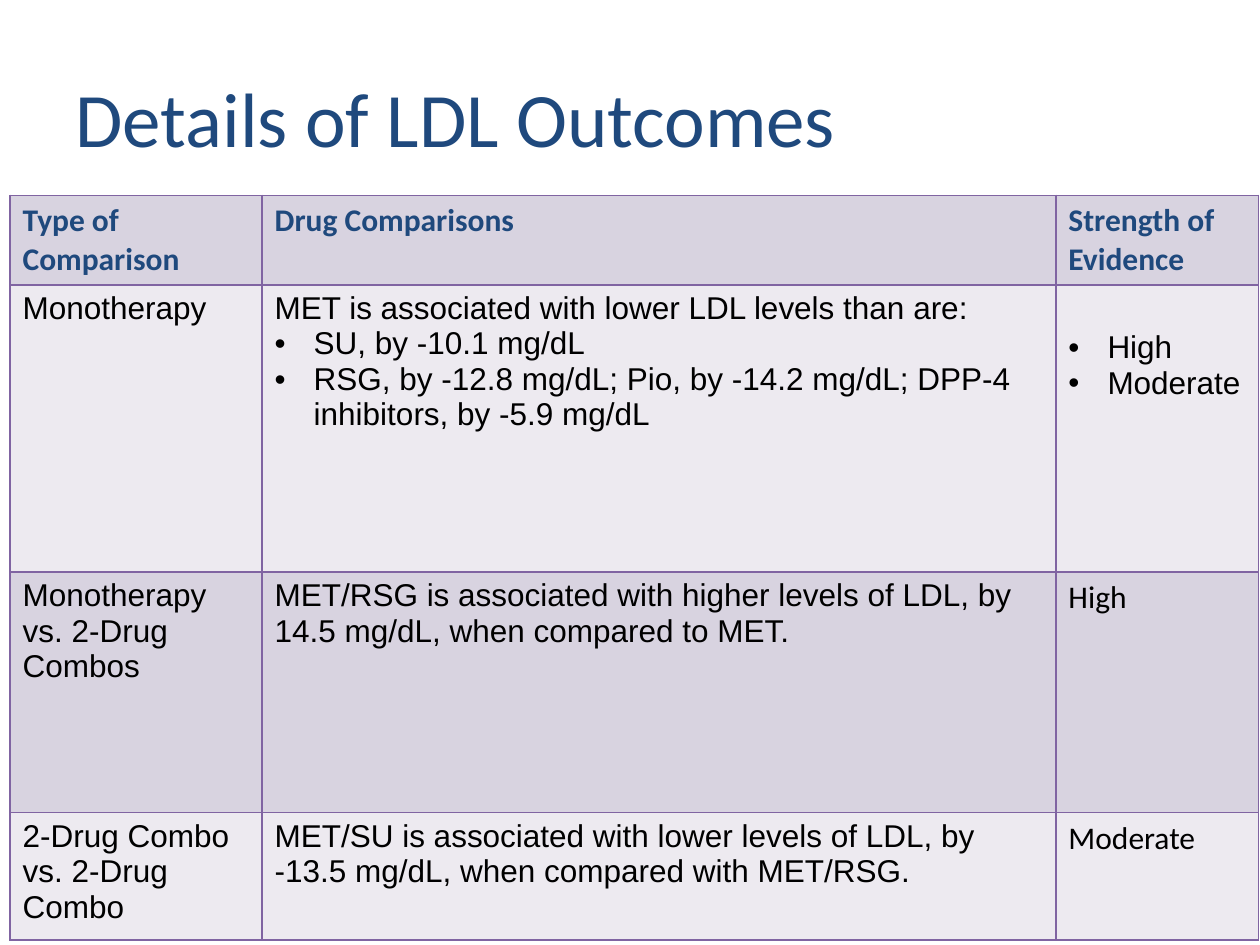
"""Build the slide that details LDL outcomes by drug comparison."""
from lxml.etree import SubElement
from pptx import Presentation
from pptx.dml.color import RGBColor
from pptx.enum.text import MSO_ANCHOR, PP_ALIGN
from pptx.oxml.ns import qn
from pptx.util import Inches, Pt

COLORS = {
    "heading": "1F497D",
    "text": "000000",
    "border": "8064A2",
    "dark_band": "D8D3E0",
    "light_band": "EDEAF0",
}
COLUMN_WIDTHS = [2, 6.3, 1.61]
ROW_HEIGHTS = [0.71, 2.28, 1.91, 1.01]
BULLET = "• "
ROWS = [
    [["Type of Comparison"], ["Drug Comparisons"], ["Strength of Evidence"]],
    [
        ["Monotherapy"],
        [
            "MET is associated with lower LDL levels than are:",
            BULLET + "SU, by -10.1 mg/dL",
            BULLET + "RSG, by -12.8 mg/dL; Pio, by -14.2 mg/dL; "
            "DPP-4 inhibitors, by -5.9 mg/dL",
        ],
        [BULLET + "High", BULLET + "Moderate"],
    ],
    [
        ["Monotherapy vs. 2-Drug Combos"],
        ["MET/RSG is associated with higher levels of LDL, by 14.5 mg/dL, "
         "when compared to MET."],
        ["High"],
    ],
    [
        ["2-Drug Combo vs. 2-Drug Combo"],
        ["MET/SU is associated with lower levels of LDL, by -13.5 mg/dL, "
         "when compared with MET/RSG."],
        ["Moderate"],
    ],
]


class SlideBuilder:
    """Hold the style and the current slide, and add elements to it."""

    def __init__(self, presentation):
        """Start a slide with a title placeholder."""
        self.slide = presentation.slides.add_slide(presentation.slide_layouts[5])

    def color(self, name):
        """Return a named colour."""
        return RGBColor.from_string(COLORS[name])

    def style(self, paragraph, font_name, size, color, bold=False):
        """Set the font of a paragraph."""
        font = paragraph.font
        font.name, font.size, font.bold = font_name, Pt(size), bold
        font.color.rgb = self.color(color)

    def title(self, text, left, top, width, height):
        """Fill and place the title."""
        shape = self.slide.shapes.title
        shape.left, shape.top = Inches(left), Inches(top)
        shape.width, shape.height = Inches(width), Inches(height)
        frame = shape.text_frame
        frame.text = text
        frame.vertical_anchor = MSO_ANCHOR.MIDDLE
        paragraph = frame.paragraphs[0]
        paragraph.alignment = PP_ALIGN.LEFT
        self.style(paragraph, "Calibri", 44, "heading")

    def bullet(self, paragraph):
        """Give a paragraph a hanging bullet."""
        properties = paragraph._p.get_or_add_pPr()
        indent = Inches(0.31)
        properties.set("marL", str(indent))
        properties.set("indent", str(-indent))
        SubElement(properties, qn("a:buFont"), typeface="Arial")
        SubElement(properties, qn("a:buChar"), char=BULLET.strip())

    def borders(self, cell):
        """Draw a thin line on every side of a cell."""
        properties = cell._tc.get_or_add_tcPr()
        for side in ("lnL", "lnR", "lnT", "lnB"):
            line = SubElement(properties, qn(f"a:{side}"), w=str(Pt(1)))
            fill = SubElement(line, qn("a:solidFill"))
            SubElement(fill, qn("a:srgbClr"), val=COLORS["border"])

    def cell(self, cell, lines, band, **font):
        """Fill one table cell with paragraphs."""
        self.borders(cell)
        cell.fill.solid()
        cell.fill.fore_color.rgb = self.color(band)
        cell.margin_left = cell.margin_right = Inches(0.1)
        starts_with_bullet = lines[0].startswith(BULLET)
        cell.margin_top = Inches(0.36 if starts_with_bullet else 0.05)
        cell.margin_bottom = Inches(0.05)
        frame = cell.text_frame
        frame.text = "\n".join(line.removeprefix(BULLET) for line in lines)
        for paragraph, line in zip(frame.paragraphs, lines):
            if line.startswith(BULLET):
                self.bullet(paragraph)
            self.style(paragraph, size=18, **font)

    def table(self, rows, left, top):
        """Add the banded comparison table."""
        table = self.slide.shapes.add_table(
            len(rows), len(COLUMN_WIDTHS), Inches(left), Inches(top),
            Inches(sum(COLUMN_WIDTHS)), Inches(sum(ROW_HEIGHTS))).table
        table.first_row = table.horz_banding = False
        for column, width in zip(table.columns, COLUMN_WIDTHS):
            column.width = Inches(width)
        for row_index, row in enumerate(rows):
            table.rows[row_index].height = Inches(ROW_HEIGHTS[row_index])
            band = "light_band" if row_index % 2 else "dark_band"
            is_header = row_index == 0
            for column_index, lines in enumerate(row):
                is_rating = column_index == 2 and row_index > 1
                self.cell(
                    table.cell(row_index, column_index), lines, band,
                    font_name="Calibri" if is_header or is_rating else "Arial",
                    color="heading" if is_header else "text", bold=is_header)


def main():
    """Build and save the presentation."""
    presentation = Presentation()
    presentation.slide_width, presentation.slide_height = Inches(10), Inches(7.5)
    builder = SlideBuilder(presentation)
    builder.title("Details of LDL Outcomes", 0.5, 0.3, 9, 1.25)
    builder.table(ROWS, 0.08, 1.55)
    presentation.save("out.pptx")


if __name__ == "__main__":
    main()
